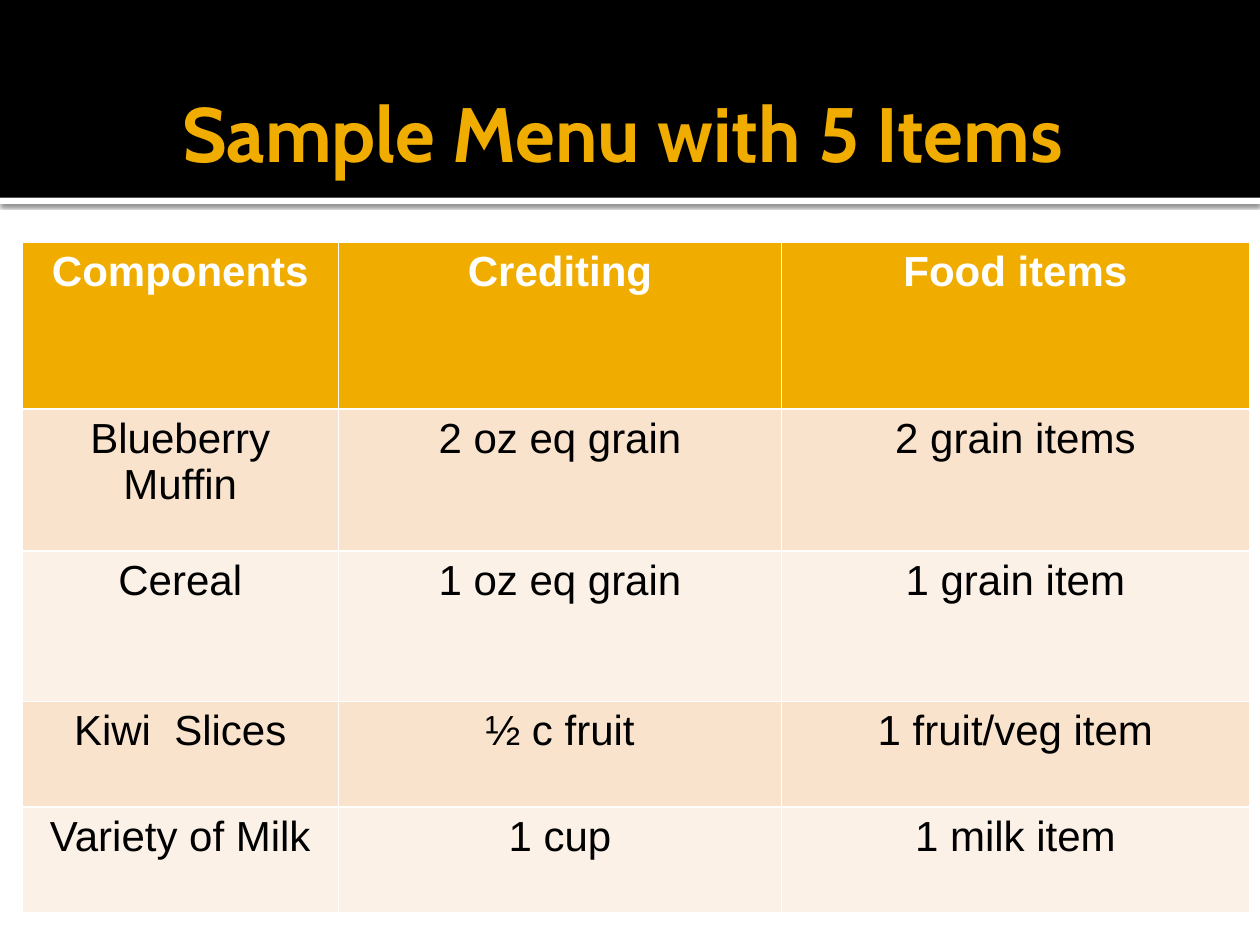
from dataclasses import dataclass

from lxml.etree import SubElement
from pptx import Presentation
from pptx.dml.color import RGBColor
from pptx.enum.shapes import MSO_SHAPE as Preset
from pptx.enum.text import MSO_ANCHOR as Anchor, PP_ALIGN as Align
from pptx.oxml.ns import qn
from pptx.shapes.autoshape import Shape
from pptx.slide import Slide
from pptx.text.text import _Paragraph as Paragraph
from pptx.util import Pt


@dataclass(frozen=True)
class Theme:
    black: str = "000000"
    white: str = "FFFFFF"
    gold: str = "F0AD00"
    bands: tuple[str, str] = ("F9E3CC", "FCF1E7")
    title_font: str = "Cabin"
    table_font: str = "Arial"
    title_size: float = 44
    table_size: float = 24


@dataclass(frozen=True)
class Box:
    left: float
    top: float
    width: float
    height: float

    def lengths(self) -> tuple[Pt, Pt, Pt, Pt]:
        return Pt(self.left), Pt(self.top), Pt(self.width), Pt(self.height)


@dataclass(frozen=True)
class MenuRow:
    height: float
    component: str
    crediting: str
    food_items: str


THEME = Theme()
SLIDE_WIDTH, SLIDE_HEIGHT = 720, 540
HEADER_HEIGHT = 113
HEADER_BAND = Box(0, 0, SLIDE_WIDTH, HEADER_HEIGHT)
HEADER_RULE = Box(0, HEADER_HEIGHT, SLIDE_WIDTH, 3.6)
TITLE_BOX = Box(12.24, 30.24, 696, 90)
TABLE_LEFT, TABLE_TOP = 12.5, 138.2
COLUMN_WIDTHS = (181, 253, 267.5)
MENU = (
    MenuRow(95.4, "Components", "Crediting", "Food items"),
    MenuRow(81.2, "Blueberry Muffin", "2 oz eq grain", "2 grain items"),
    MenuRow(86, "Cereal", "1 oz eq grain", "1 grain item"),
    MenuRow(60.5, "Kiwi  Slices", "½ c fruit", "1 fruit/veg item"),
    MenuRow(60.5, "Variety of Milk", "1 cup", "1 milk item"),
)


def style_text(paragraph: Paragraph, name: str, size: float, color: str, bold: bool) -> None:
    paragraph.alignment = Align.CENTER
    font = paragraph.font
    font.name, font.size, font.bold = name, Pt(size), bold
    font.color.rgb = RGBColor.from_string(color)


def add_bar(slide: Slide, box: Box, color: str) -> Shape:
    shape = slide.shapes.add_shape(Preset.RECTANGLE, *box.lengths())
    shape.shadow.inherit = False
    shape.fill.solid()
    shape.fill.fore_color.rgb = RGBColor.from_string(color)
    shape.line.fill.background()
    return shape


def add_drop_shadow(shape: Shape, blur: float, distance: float, opacity: int) -> None:
    effects = shape.element.spPr.find(qn("a:effectLst"))
    shadow = SubElement(
        effects, qn("a:outerShdw"), blurRad=str(Pt(blur)), dist=str(Pt(distance)),
        dir="5400000", algn="t", rotWithShape="0",
    )
    color = SubElement(shadow, qn("a:srgbClr"), val=THEME.black)
    SubElement(color, qn("a:alpha"), val=str(opacity * 1000))


def add_title(slide: Slide, text: str) -> None:
    frame = slide.shapes.add_textbox(*TITLE_BOX.lengths()).text_frame
    frame.word_wrap = True
    frame.vertical_anchor = Anchor.MIDDLE
    # The wider right margin sets the title slightly left of centre
    frame.margin_left, frame.margin_right = Pt(3.6), Pt(12.2)
    frame.text = text
    style_text(frame.paragraphs[0], THEME.title_font, THEME.title_size, THEME.gold, True)


def add_menu_table(slide: Slide, rows: tuple[MenuRow, ...]) -> None:
    box = Box(TABLE_LEFT, TABLE_TOP, sum(COLUMN_WIDTHS), sum(row.height for row in rows))
    # The default table style supplies the white cell borders
    table = slide.shapes.add_table(len(rows), len(COLUMN_WIDTHS), *box.lengths()).table
    for column, width in zip(table.columns, COLUMN_WIDTHS):
        column.width = Pt(width)
    for index, row in enumerate(rows):
        table.rows[index].height = Pt(row.height)
        header = index == 0
        fill = THEME.gold if header else THEME.bands[(index - 1) % 2]
        color = THEME.white if header else THEME.black
        texts = (row.component, row.crediting, row.food_items)
        for cell, text in zip(table.rows[index].cells, texts):
            cell.text = text
            cell.fill.solid()
            cell.fill.fore_color.rgb = RGBColor.from_string(fill)
            style_text(cell.text_frame.paragraphs[0], THEME.table_font,
                       THEME.table_size, color, header)


def main() -> None:
    presentation = Presentation()
    presentation.slide_width, presentation.slide_height = Pt(SLIDE_WIDTH), Pt(SLIDE_HEIGHT)
    slide = presentation.slides.add_slide(presentation.slide_layouts[6])

    # Header band with a shadowed white rule below it
    add_drop_shadow(add_bar(slide, HEADER_RULE, THEME.white), 2.5, 0.8, 60)
    add_bar(slide, HEADER_BAND, THEME.black)
    add_title(slide, "Sample Menu with 5 Items")

    # Menu
    add_menu_table(slide, MENU)
    presentation.save("out.pptx")


if __name__ == "__main__":
    main()
